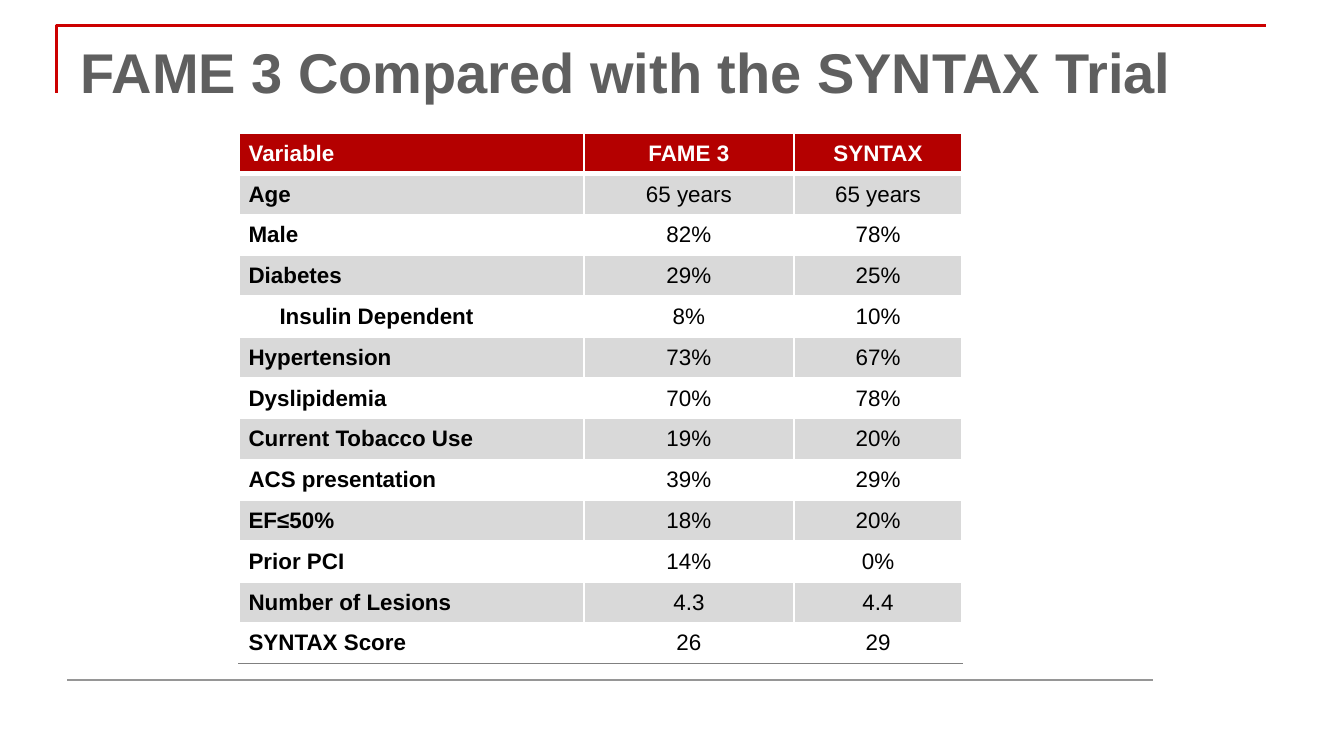
from lxml import etree
from pptx import Presentation
from pptx.dml.color import RGBColor
from pptx.enum.shapes import MSO_CONNECTOR
from pptx.enum.text import MSO_ANCHOR, PP_ALIGN
from pptx.oxml.ns import qn
from pptx.util import Inches, Pt

STRAIGHT = MSO_CONNECTOR.STRAIGHT
LEFT, CENTER = PP_ALIGN.LEFT, PP_ALIGN.CENTER
TOP, MIDDLE = MSO_ANCHOR.TOP, MSO_ANCHOR.MIDDLE
TITLE_ONLY = 5

RED, DARK_RED, WHITE, BLACK = "CC0000", "B40000", "FFFFFF", "000000"
TITLE_GRAY, RULE_GRAY, BAND_GRAY, EDGE_GRAY = "5F5F5F", "969696", "D9D9D9", "808080"

COLUMN_WIDTHS = [2.56, 1.56, 1.25]
INDENTED = {"Insulin Dependent"}
ROWS = [
    ("Variable", "FAME 3", "SYNTAX"),
    ("Age", "65 years", "65 years"),
    ("Male", "82%", "78%"),
    ("Diabetes", "29%", "25%"),
    ("Insulin Dependent", "8%", "10%"),
    ("Hypertension", "73%", "67%"),
    ("Dyslipidemia", "70%", "78%"),
    ("Current Tobacco Use", "19%", "20%"),
    ("ACS presentation", "39%", "29%"),
    ("EF≤50%", "18%", "20%"),
    ("Prior PCI", "14%", "0%"),
    ("Number of Lesions", "4.3", "4.4"),
    ("SYNTAX Score", "26", "29"),
]


def color(value):
    return RGBColor.from_string(value)


def set_attributes(target, values):
    for name, value in values.items():
        setattr(target, name, value)


def write(paragraph, text, size, text_color, bold, align):
    paragraph.text = text
    paragraph.alignment = align
    set_attributes(paragraph.font, {"name": "Arial", "size": Pt(size), "bold": bold})
    paragraph.font.color.rgb = color(text_color)


def style_line(shape, line_color):
    shape.line.color.rgb = color(line_color)
    shape.line.width = Pt(1.5)


def set_border(cell, side, line_color, width):
    properties = cell._tc.get_or_add_tcPr()
    line = etree.SubElement(properties, qn(f"a:ln{side}"), w=str(Pt(width)))
    fill = etree.SubElement(line, qn("a:solidFill"))
    etree.SubElement(fill, qn("a:srgbClr"), val=line_color)


def add_corner(slide, left, top, width, height):
    builder = slide.shapes.build_freeform(Inches(left), Inches(top + height))
    corner_points = [(left, top), (left + width, top)]
    builder.add_line_segments([(Inches(x), Inches(y)) for x, y in corner_points], close=False)
    corner = builder.convert_to_shape()
    corner.shadow.inherit = False
    corner.fill.background()
    style_line(corner, RED)


def add_footer_rule(slide, left, top, width):
    ends = [Inches(value) for value in (left, top, left + width, top)]
    rule = slide.shapes.add_connector(STRAIGHT, *ends)
    etree.SubElement(rule._element.spPr, qn("a:effectLst"))
    style_line(rule, RULE_GRAY)


def add_title(slide, left, top, width, height):
    title = slide.shapes.title
    set_attributes(title, {"left": Inches(left), "top": Inches(top),
                           "width": Inches(width), "height": Inches(height)})
    set_attributes(title.text_frame, {
        "word_wrap": True, "vertical_anchor": TOP,
        "margin_left": Inches(0.1), "margin_top": Inches(0.05),
        "margin_right": Inches(0.1), "margin_bottom": Inches(0.05)})
    write(title.text_frame.paragraphs[0], "FAME 3 Compared with the SYNTAX Trial",
          30, TITLE_GRAY, True, LEFT)


def format_cell(cell, text, row, column):
    header, last = row == 0, row == len(ROWS) - 1
    # Borders come before the fill in the cell properties
    for side in "LRT":
        set_border(cell, side, WHITE, 3 if side == "T" and row == 1 else 1)
    set_border(cell, "B", EDGE_GRAY if last else WHITE, 3 if header else 1)
    if header or row % 2:
        cell.fill.solid()
        cell.fill.fore_color.rgb = color(DARK_RED if header else BAND_GRAY)
    else:
        cell.fill.background()
    set_attributes(cell, {
        "vertical_anchor": MIDDLE,
        "margin_left": Inches(0.3 if text in INDENTED else 0.07),
        "margin_right": Inches(0.07),
        "margin_top": Inches(0.04), "margin_bottom": Inches(0.04)})
    write(cell.text_frame.paragraphs[0], text, 12, WHITE if header else BLACK,
          header or column == 0, CENTER if column else LEFT)


def add_comparison_table(slide, left, top, width, height):
    box = [Inches(value) for value in (left, top, width, height)]
    table = slide.shapes.add_table(len(ROWS), len(COLUMN_WIDTHS), *box).table
    for column, share in zip(table.columns, COLUMN_WIDTHS):
        column.width = Inches(width * share / sum(COLUMN_WIDTHS))
    for row_index, values in enumerate(ROWS):
        table.rows[row_index].height = Inches(height / len(ROWS))
        for column_index, text in enumerate(values):
            format_cell(table.cell(row_index, column_index), text, row_index, column_index)


def main():
    presentation = Presentation()
    # Widescreen, 16 to 9
    presentation.slide_width = Inches(10)
    presentation.slide_height = Inches(10 * 9 / 16)
    slide = presentation.slides.add_slide(presentation.slide_layouts[TITLE_ONLY])
    # Frame lines
    add_corner(slide, 0.42, 0.19, 9, 0.5)
    add_footer_rule(slide, 0.5, 5.06, 8.08)
    # Content
    add_title(slide, 0.5, 0.23, 9, 0.93)
    add_comparison_table(slide, 1.78, 0.99, 5.38, 3.95)
    presentation.save("out.pptx")


if __name__ == "__main__":
    main()
